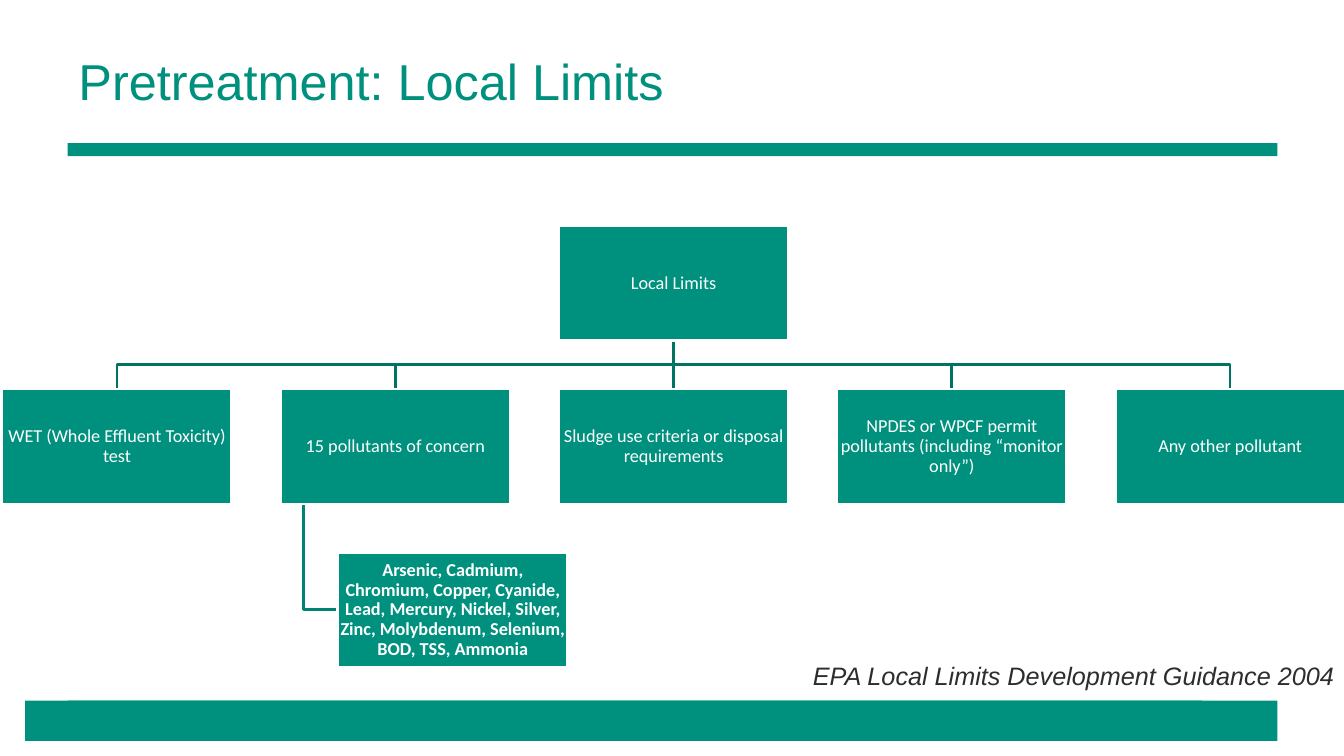
from dataclasses import dataclass

from lxml.etree import SubElement
from pptx import Presentation
from pptx.dml.color import RGBColor
from pptx.enum.shapes import MSO_CONNECTOR, MSO_SHAPE
from pptx.enum.text import MSO_ANCHOR, MSO_AUTO_SIZE, PP_ALIGN
from pptx.oxml.ns import qn
from pptx.util import Inches, Pt


@dataclass(frozen=True)
class Theme:
    teal: RGBColor = RGBColor.from_string("00907E")
    branch: RGBColor = RGBColor.from_string("007365")
    hanger: RGBColor = RGBColor.from_string("008372")
    white: RGBColor = RGBColor.from_string("FFFFFF")
    ink: RGBColor = RGBColor.from_string("2D2D2D")
    heading: str = "Arial"
    body: str = "Calibri"
    title_size: int = 36
    note_size: int = 18
    box_size: int = 13
    line: int = 2


@dataclass(frozen=True)
class Grid:
    left: float = 0.02
    top: float = 2.24
    col: float = 2.76
    row: float = 1.62
    box_w: float = 2.28
    box_h: float = 1.14

    def at(self, col, row):
        return self.left + col * self.col, self.top + row * self.row


def apply(target, values):
    for name, value in values.items():
        setattr(target, name, value)


class ChartSlide:
    def __init__(self, prs, theme, grid):
        self.theme, self.grid = theme, grid
        self.slide = prs.slides.add_slide(prs.slide_layouts[6])
        self.shapes = self.slide.shapes

    def set_text(self, sp, text, color, frame, para, font):
        tf = sp.text_frame
        apply(tf, {"word_wrap": True, **frame})
        p = tf.paragraphs[0]
        apply(p, para)
        r = p.add_run()
        r.text = text
        apply(r.font, font)
        r.font.color.rgb = color

    def rect(self, x, y, w, h):
        sp = self.shapes.add_shape(MSO_SHAPE.RECTANGLE, *map(Inches, (x, y, w, h)))
        sp.shadow.inherit = False
        sp.fill.solid()
        sp.fill.fore_color.rgb = self.theme.teal
        sp.line.fill.background()
        return sp

    def label(self, x, y, w, h, text, color, frame, para, font):
        sp = self.shapes.add_textbox(*map(Inches, (x, y, w, h)))
        self.set_text(sp, text, color, frame, para, {"name": self.theme.heading, **font})

    def box(self, col, row, text, bold=False):
        sp = self.rect(*self.grid.at(col, row), self.grid.box_w, self.grid.box_h)
        self.stroke(sp, self.theme.white)
        sides = ("left", "top", "right", "bottom")
        frame = {f"margin_{side}": Inches(0.01) for side in sides}
        self.set_text(sp, text, self.theme.white,
                      {"vertical_anchor": MSO_ANCHOR.MIDDLE, **frame},
                      {"alignment": PP_ALIGN.CENTER, "line_spacing": 0.9},
                      {"name": self.theme.body, "size": Pt(self.theme.box_size), "bold": bold})
        return sp

    def stroke(self, sp, color):
        sp.line.color.rgb = color
        sp.line.width = Pt(self.theme.line)

    def send_back(self, sp):
        self.shapes._spTree.insert(2, sp._element)

    def elbow(self, points, color):
        start, *rest = points
        builder = self.shapes.build_freeform(*start)
        builder.add_line_segments(rest, close=False)
        sp = builder.convert_to_shape()
        sp.shadow.inherit = False
        sp.fill.background()
        self.stroke(sp, color)
        self.send_back(sp)

    def straight(self, parent, child):
        line = self.shapes.add_connector(MSO_CONNECTOR.STRAIGHT, 0, 0, 0, 0)
        line.begin_connect(parent, 2)
        line.end_connect(child, 0)
        self.stroke(line, self.theme.branch)
        SubElement(line._element.spPr, qn("a:effectLst"))
        self.send_back(line)

    def branch(self, parent, child):
        x1, x2 = (sp.left + sp.width // 2 for sp in (parent, child))
        if x1 == x2:
            self.straight(parent, child)
            return
        y1, y2 = parent.top + parent.height, child.top
        mid = (y1 + y2) // 2
        self.elbow([(x1, y1), (x1, mid), (x2, mid), (x2, y2)], self.theme.branch)

    def hang(self, parent, child):
        x = parent.left + parent.width // 10
        y = child.top + child.height // 2
        self.elbow([(x, parent.top + parent.height), (x, y), (child.left, y)],
                   self.theme.hanger)


def main():
    prs = Presentation()
    apply(prs, {"slide_width": Inches(13.33), "slide_height": Inches(7.5)})
    theme, grid = Theme(), Grid()
    s = ChartSlide(prs, theme, grid)

    for bar in ((0.25, 6.95, 12.42, 0.4), (0.67, 1.42, 12, 0.13), (0.67, 6.95, 11.25, 0.4)):
        s.rect(*bar)
    s.label(0.68, 0.19, 12, 1.22, "Pretreatment: Local Limits", theme.teal,
            {"vertical_anchor": MSO_ANCHOR.MIDDLE}, {}, {"size": Pt(theme.title_size)})

    root = s.box(2, 0, "Local Limits")
    topics = (
        "WET (Whole Effluent Toxicity) test",
        "15 pollutants of concern",
        "Sludge use criteria or disposal requirements",
        "NPDES or WPCF permit pollutants (including “monitor only”)",
        "Any other pollutant",
    )
    boxes = [s.box(col, 1, text) for col, text in enumerate(topics)]
    for child in boxes:
        s.branch(root, child)
    indent = grid.box_w / 4 / grid.col
    pollutants = s.box(
        1 + indent, 2,
        "Arsenic, Cadmium, Chromium, Copper, Cyanide, Lead, Mercury, Nickel, "
        "Silver, Zinc, Molybdenum, Selenium, BOD, TSS, Ammonia", bold=True)
    s.hang(boxes[1], pollutants)

    s.label(7.71, 6.5, 5.62, 0.4, "EPA Local Limits Development Guidance 2004", theme.ink,
            {"auto_size": MSO_AUTO_SIZE.SHAPE_TO_FIT_TEXT},
            {"alignment": PP_ALIGN.RIGHT}, {"size": Pt(theme.note_size), "italic": True})
    prs.save("out.pptx")


if __name__ == "__main__":
    main()
